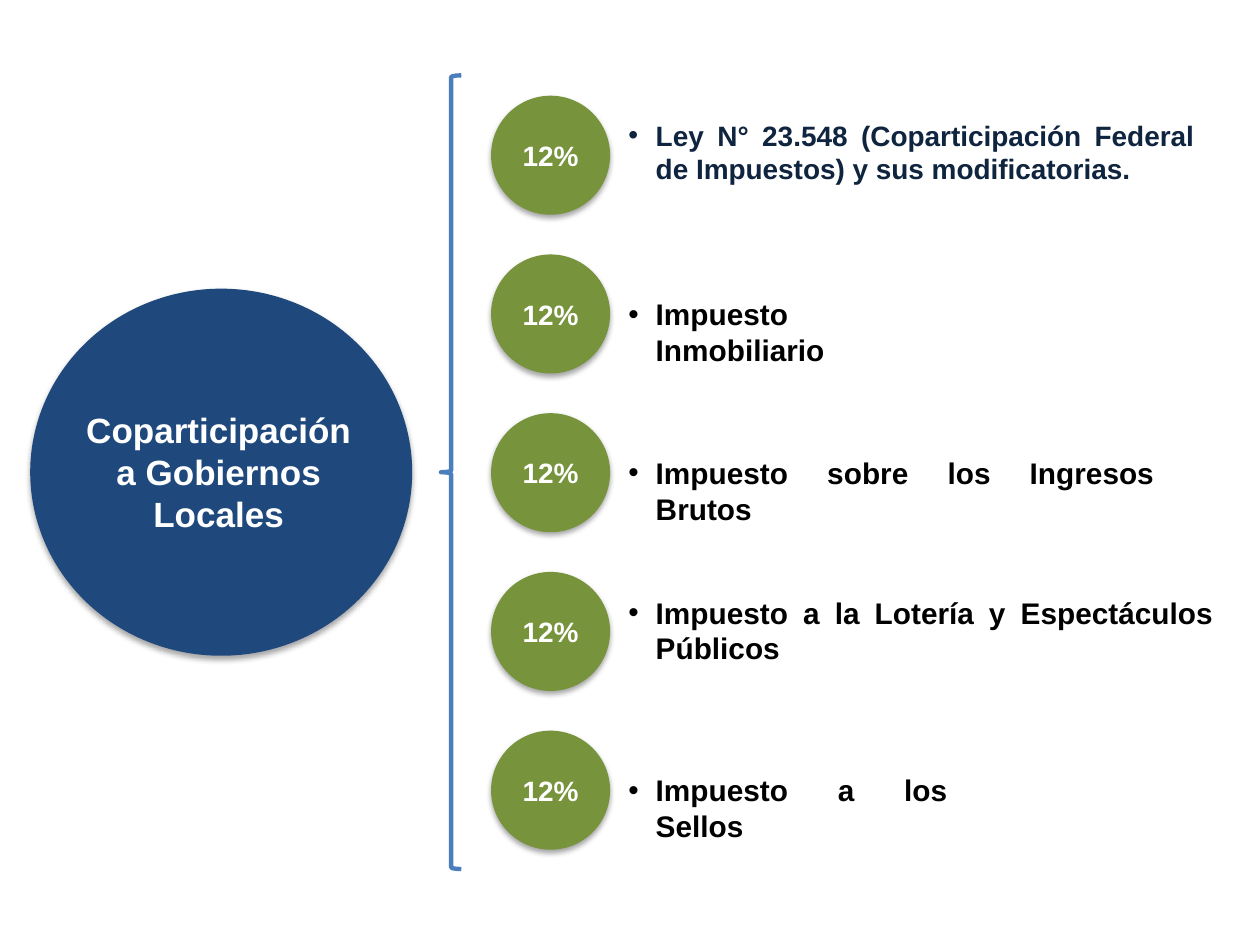
from pptx import Presentation
from pptx.dml.color import RGBColor
from pptx.enum.shapes import MSO_SHAPE
from pptx.enum.text import MSO_ANCHOR, MSO_AUTO_SIZE, PP_ALIGN
from pptx.oxml import parse_xml
from pptx.oxml.ns import nsdecls
from pptx.util import Cm, Pt

ELLIPSE, BRACE = MSO_SHAPE.OVAL, MSO_SHAPE.LEFT_BRACE
MIDDLE, GROW = MSO_ANCHOR.MIDDLE, MSO_AUTO_SIZE.SHAPE_TO_FIT_TEXT
CENTER, JUSTIFY = PP_ALIGN.CENTER, PP_ALIGN.JUSTIFY

COLOURS = {"blue": "1F497D", "green": "77933C", "brace": "4B7EBC",
           "navy": "0F243E", "black": "000000", "white": "FFFFFF"}


class SlideBuilder:
    font = "Arial"
    bullet_indent = Cm(0.55)

    def __init__(self, page):
        self.page = page

    def colour(self, name):
        return RGBColor.from_string(COLOURS[name])

    def style(self, para, size, colour, align):
        para.alignment = align
        for span in para.runs:
            span.font.name = self.font
            span.font.size = Pt(size)
            span.font.bold = True
            span.font.color.rgb = self.colour(colour)

    def add_shadow(self, shape):
        shape.shadow.inherit = False
        effects = shape._element.spPr.find(
            "{http://schemas.openxmlformats.org/drawingml/2006/main}effectLst")
        effects.append(parse_xml(
            f'<a:outerShdw {nsdecls("a")} blurRad="40000" dist="23000" dir="5400000" '
            'rotWithShape="0"><a:srgbClr val="000000"><a:alpha val="35000"/>'
            '</a:srgbClr></a:outerShdw>'))

    def circle(self, left, top, width, height, text, size, fill, insets=None):
        shape = self.page.shapes.add_shape(
            ELLIPSE, Cm(left), Cm(top), Cm(width), Cm(height))
        shape.fill.solid()
        shape.fill.fore_color.rgb = self.colour(fill)
        shape.line.fill.background()
        self.add_shadow(shape)
        frame = shape.text_frame
        frame.word_wrap = True
        frame.vertical_anchor = MIDDLE
        if insets:
            (frame.margin_left, frame.margin_top,
             frame.margin_right, frame.margin_bottom) = map(Cm, insets)
        frame.text = text
        self.style(frame.paragraphs[0], size, "white", CENTER)

    def brace(self, left, top, width, height):
        shape = self.page.shapes.add_shape(
            BRACE, Cm(left), Cm(top), Cm(width), Cm(height))
        shape.shadow.inherit = False
        shape.fill.background()
        shape.line.color.rgb = self.colour("brace")
        shape.line.width = Pt(2.5)

    def bullet(self, left, top, width, height, text, size, colour):
        box = self.page.shapes.add_textbox(Cm(left), Cm(top), Cm(width), Cm(height))
        frame = box.text_frame
        frame.word_wrap = True
        frame.auto_size = GROW
        frame.text = text
        para = frame.paragraphs[0]
        props = para._p.get_or_add_pPr()
        props.set("marL", str(self.bullet_indent))
        props.set("indent", str(-self.bullet_indent))
        props.append(parse_xml(f'<a:buFont {nsdecls("a")} typeface="Arial"/>'))
        props.append(parse_xml(f'<a:buChar {nsdecls("a")} char="•"/>'))
        self.style(para, size, colour, JUSTIFY)


# Top, width, height, text, size and colour of each tax
TAXES = [
    (2.26, 11.91, 2.39, "Ley N° 23.548 (Coparticipación Federal de Impuestos) "
     "y sus modificatorias.", 16, "navy"),
    (5.84, 7.04, 0.99, "Impuesto Inmobiliario", 17, "black"),
    (9.04, 11.1, 0.99, "Impuesto sobre los Ingresos Brutos", 17, "black"),
    (11.86, 12.29, 1.7, "Impuesto a la Lotería y Espectáculos Públicos", 17, "black"),
    (15.44, 6.93, 0.99, "Impuesto a los Sellos", 17, "black"),
]
SHARE_TOP, SHARE_STEP, SHARE_SIZE = 1.93, 3.2, 2.4


def main():
    deck = Presentation()
    deck.slide_width, deck.slide_height = Cm(25.4), Cm(19.05)
    builder = SlideBuilder(deck.slides.add_slide(deck.slide_layouts[6]))

    # Main topic and brace
    builder.circle(0.61, 5.82, 7.7, 7.4, "Coparticipación a Gobiernos Locales",
                   20, "blue", insets=(0, 0.1, 0.1, 0.13))
    builder.brace(8.89, 1.52, 0.41, 16)

    # Taxes, each with its share
    for row, (top, width, height, text, size, colour) in enumerate(TAXES):
        builder.bullet(12.42, top, width, height, text, size, colour)
        builder.circle(9.9, SHARE_TOP + row * SHARE_STEP, SHARE_SIZE, SHARE_SIZE,
                       "12%", 16, "green")

    deck.save("out.pptx")


if __name__ == "__main__":
    main()
